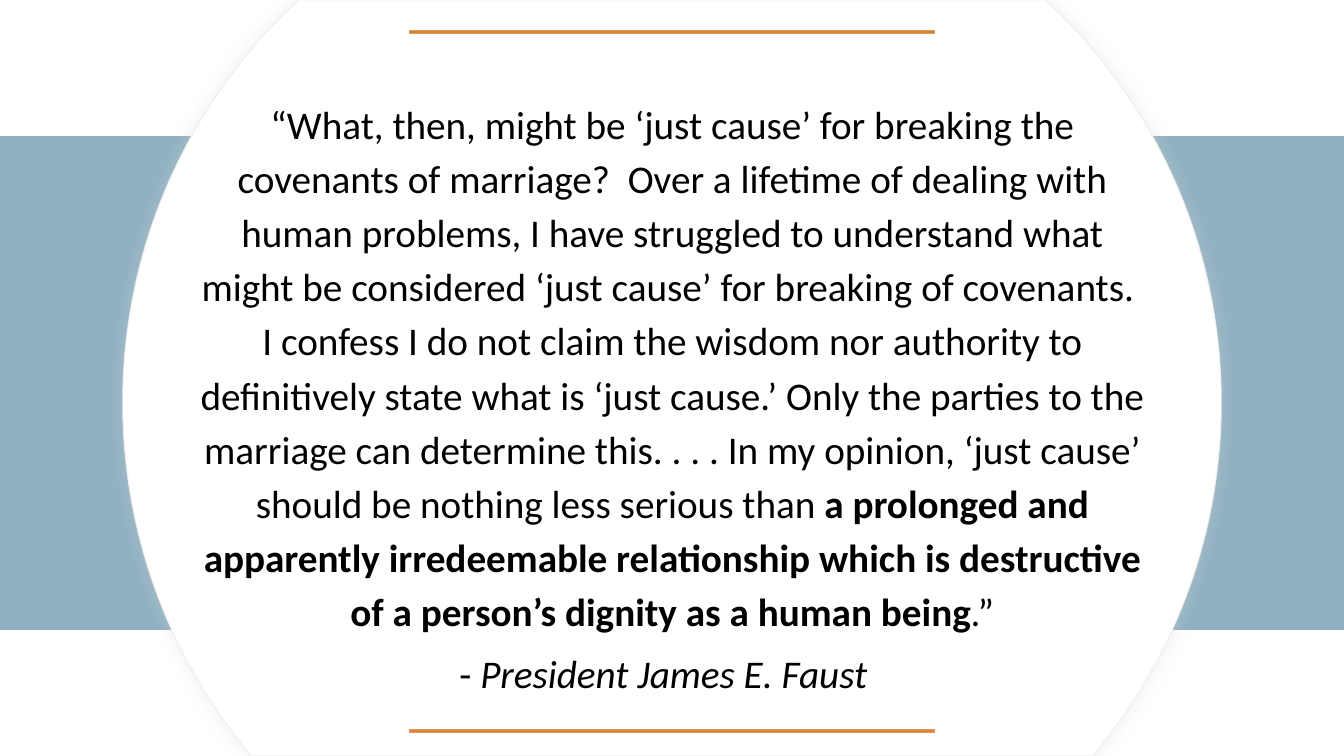
from lxml import etree
from pptx import Presentation
from pptx.dml.color import RGBColor
from pptx.enum.shapes import MSO_SHAPE as Shape
from pptx.enum.text import MSO_ANCHOR as Anchor, MSO_AUTO_SIZE as AutoSize, PP_ALIGN as Align
from pptx.oxml.ns import qn
from pptx.util import Pt

QUOTE = [
    ("“What, then, might be ‘just cause’ for breaking the covenants of marriage?  "
     "Over a lifetime of dealing with human problems, I have struggled to understand "
     "what might be considered ‘just cause’ for breaking of covenants.  I confess I do "
     "not claim the wisdom nor authority to definitively state what is ‘just cause.’ "
     "Only the parties to the marriage can determine this. . . . In my opinion, "
     "‘just cause’ should be nothing less serious than ", {}),
    ("a prolonged and apparently irredeemable relationship which is destructive "
     "of a person’s dignity as a human being", {"bold": True}),
    (".”", {}),
]
ATTRIBUTION = [("- ", {}), ("President James E. Faust", {"italic": True})]

THEME = {
    "band": "90B1C2", "disc": "FFFFFF", "disc_edge": "EFEFEF", "glow": "D8D8D8",
    "rule": "ED7D31", "rule_edge": "D09D5C", "text": "000000",
    "font": "Calibri", "size": 28, "edge_width": 0.75,
    "glow_blur": 11, "glow_alpha": 37,
}
WIDTH, HEIGHT = 960, 540
BAND = (0, 97.2, WIDTH, 352.8)
DISC_X = 480
DISC_RIGHT_SIDE = [
    [(266.8, 0)],
    [(277.4, 10.1)],
    [(348.7, 81.4), (392.3, 179.3), (392.3, 287.3)],
    [(392.3, 382.3), (358.8, 469.4), (302.8, 537.1)],
    [(300.2, HEIGHT)],
]
RULE_WIDTH, RULE_HEIGHT, RULE_TOPS = 374.8, 2.2, (21.6, 521.3)
QUOTE_BOX = (131, 59.5, 698.4, 404.6)
ATTRIBUTION_BOX = (321.1, 460.4, 318.2, 41.4)


def color(name):
    return RGBColor.from_string(THEME[name])


def apply_format(target, values):
    for name, value in values.items():
        setattr(target, name, value)


def place(shape, box):
    apply_format(shape, dict(zip(("left", "top", "width", "height"), map(Pt, box))))


def paint(shape, fill, edge):
    shape.shadow.inherit = False
    shape.fill.solid()
    shape.fill.fore_color.rgb = color(fill)
    shape.line.color.rgb = color(edge)
    shape.line.width = Pt(THEME["edge_width"])


def add_bar(slide, box, fill, edge):
    paint(slide.shapes.add_shape(Shape.RECTANGLE, *map(Pt, box)), fill, edge)


def mirrored(segments):
    flat = [(-x, y) for segment in segments for x, y in segment][::-1]
    sizes = [1] + [len(segment) for segment in segments[:0:-1]]
    starts = [sum(sizes[:index]) for index in range(len(sizes))]
    return [flat[start:start + size] for start, size in zip(starts, sizes)]


def add_disc(slide):
    sides = DISC_RIGHT_SIDE + mirrored(DISC_RIGHT_SIDE)
    segments = [[(Pt(DISC_X + x), Pt(y)) for x, y in side] for side in sides]
    anchors = [segment[-1] for segment in segments]
    builder = slide.shapes.build_freeform(*anchors[0])
    builder.add_line_segments(anchors[1:], close=True)
    disc = builder.convert_to_shape()
    lines = list(disc._element.iter(qn("a:lnTo")))
    for line, segment in zip(lines, segments[1:]):
        if len(segment) == 3:
            line.tag = qn("a:cubicBezTo")
            line.clear()
            for x, y in segment:
                etree.SubElement(line, qn("a:pt"), x=str(x - disc.left), y=str(y - disc.top))
    paint(disc, "disc", "disc_edge")
    effects = disc._element.spPr.find(qn("a:effectLst"))
    glow = etree.SubElement(effects, qn("a:outerShdw"), blurRad=str(Pt(THEME["glow_blur"])),
                            dist="0", dir="0", algn="ctr", rotWithShape="0")
    tint = etree.SubElement(glow, qn("a:srgbClr"), val=THEME["glow"])
    etree.SubElement(tint, qn("a:alpha"), val=str(THEME["glow_alpha"] * 1000))


def write(shape, runs, inset_y, paragraph_format):
    frame = shape.text_frame
    apply_format(frame, {
        "word_wrap": True, "auto_size": AutoSize.SHAPE_TO_FIT_TEXT,
        "vertical_anchor": Anchor.TOP, "margin_left": Pt(7.2), "margin_right": Pt(7.2),
        "margin_top": Pt(inset_y), "margin_bottom": Pt(inset_y),
    })
    paragraph = frame.paragraphs[0]
    apply_format(paragraph, {"space_before": Pt(0), "space_after": Pt(0), **paragraph_format})
    for text, emphasis in runs:
        run = paragraph.add_run()
        run.text = text
        apply_format(run.font, {"name": THEME["font"], "size": Pt(THEME["size"]), **emphasis})
        run.font.color.rgb = color("text")
    return paragraph


def add_quote(slide, body):
    slide.shapes._spTree.append(body._element)
    place(body, QUOTE_BOX)
    paragraph = write(body, QUOTE, 7.2, {"alignment": Align.CENTER, "line_spacing": 1.15})
    properties = paragraph._p.get_or_add_pPr()
    properties.set("marL", "0")
    properties.set("indent", "0")
    etree.SubElement(properties, qn("a:buNone"))


def main():
    presentation = Presentation()
    apply_format(presentation, {"slide_width": Pt(WIDTH), "slide_height": Pt(HEIGHT)})
    slide = presentation.slides.add_slide(presentation.slide_layouts[1])
    title, body = slide.placeholders
    title._element.getparent().remove(title._element)

    add_bar(slide, BAND, "band", "band")
    add_disc(slide)
    for top in RULE_TOPS:
        rule_box = ((WIDTH - RULE_WIDTH) / 2, top, RULE_WIDTH, RULE_HEIGHT)
        add_bar(slide, rule_box, "rule", "rule_edge")
    add_quote(slide, body)
    attribution = slide.shapes.add_textbox(*map(Pt, ATTRIBUTION_BOX))
    write(attribution, ATTRIBUTION, 3.6, {"alignment": Align.LEFT})
    presentation.save("out.pptx")


if __name__ == "__main__":
    main()
